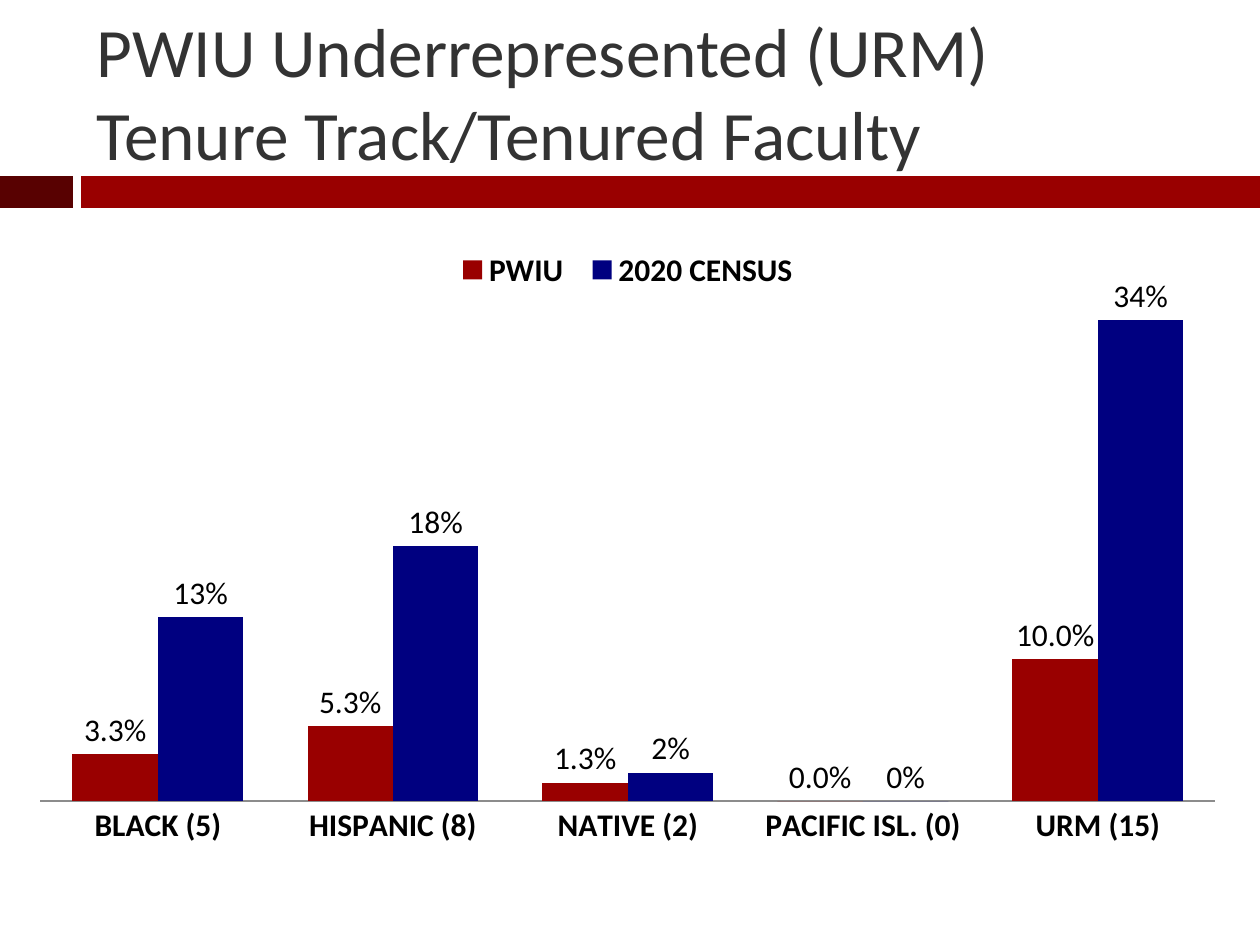
import lxml.etree
import pptx
import pptx.chart.data
import pptx.dml.color
import pptx.enum.chart
import pptx.enum.shapes
import pptx.enum.text
import pptx.oxml
import pptx.oxml.ns
import pptx.util

SCALE = 914400 / 126
FONT = "Calibri"
COLORS = {
    "maroon": "580101",
    "red": "990000",
    "navy": "000080",
    "title": "333333",
    "text": "000000",
    "axis": "8C8C8C",
}
CATEGORIES = ["BLACK (5)", "HISPANIC (8)", "NATIVE (2)", "PACIFIC ISL. (0)", "URM (15)"]
SERIES = [
    ("PWIU", [0.033, 0.053, 0.013, 0, 0.1], "0.0%", "red"),
    ("2020 CENSUS", [0.13, 0.18, 0.02, 0, 0.34], "0%", "navy"),
]


def emu(*lengths):
    """Turn px lengths into EMU."""
    return [pptx.util.Emu(round(length * SCALE)) for length in lengths]


def color(name):
    """Look up a named colour."""
    return pptx.dml.color.RGBColor.from_string(COLORS[name])


def style_font(font, size, name, bold=False):
    """Give a font its face, size, colour and weight."""
    font.name = FONT
    font.size = pptx.util.Pt(size)
    font.bold = bold
    font.color.rgb = color(name)


def add_title(page, box):
    """Place the two-line title."""
    title = page.shapes.title
    title.left, title.top, title.width, title.height = emu(*box)
    frame = title.text_frame
    frame.text = "PWIU Underrepresented (URM)\vTenure Track/Tenured Faculty"
    frame.word_wrap = True
    frame.auto_size = pptx.enum.text.MSO_AUTO_SIZE.NONE
    frame.vertical_anchor = pptx.enum.text.MSO_ANCHOR.MIDDLE
    para = frame.paragraphs[0]
    para.alignment = pptx.enum.text.PP_ALIGN.LEFT
    for span in para.runs:
        style_font(span.font, 39.6, "title")


def add_band(page, box):
    """Draw the band with its short dark block and long red block."""
    left, top, width, height = box
    block, gap = 73, 8
    rest = block + gap
    for offset, length, name in [(0, block, "maroon"), (rest, width - rest, "red")]:
        bar = page.shapes.add_shape(
            pptx.enum.shapes.MSO_SHAPE.RECTANGLE, *emu(left + offset, top, length, height)
        )
        bar.shadow.inherit = False
        bar.fill.solid()
        bar.fill.fore_color.rgb = color(name)
        bar.line.fill.background()


def set_layout(part, before, fractions, inner=False):
    """Fix a chart part at fractions of the chart box."""
    for old in part.findall(pptx.oxml.ns.qn("c:layout")):
        part.remove(old)
    layout = lxml.etree.Element(pptx.oxml.ns.qn("c:layout"))
    manual = lxml.etree.SubElement(layout, pptx.oxml.ns.qn("c:manualLayout"))
    settings = [("layoutTarget", "inner")] if inner else []
    settings += [("xMode", "edge"), ("yMode", "edge")]
    settings += zip("xywh", fractions)
    for tag, value in settings:
        lxml.etree.SubElement(manual, pptx.oxml.ns.qn("c:" + tag), val=str(value))
    part.find(pptx.oxml.ns.qn(before)).addprevious(layout)


def add_faculty_chart(page, box):
    """Place the column chart comparing faculty with the census."""
    data = pptx.chart.data.CategoryChartData()
    data.categories = CATEGORIES
    for name, values, number_format, _ in SERIES:
        data.add_series(name, values, number_format)
    kind = pptx.enum.chart.XL_CHART_TYPE.COLUMN_CLUSTERED
    chart = page.shapes.add_chart(kind, *emu(*box), data).chart
    style_font(chart.font, 18, "text")
    chart.has_title = False

    plot = chart.plots[0]
    plot.gap_width = 75
    plot.overlap = 0
    plot.vary_by_categories = False
    for series, (_, _, number_format, name) in zip(plot.series, SERIES):
        series.format.fill.solid()
        series.format.fill.fore_color.rgb = color(name)
        series.invert_if_negative = False
        labels = series.data_labels
        labels.show_value = True
        labels.number_format = number_format
        labels.number_format_is_linked = False
        labels.position = pptx.enum.chart.XL_LABEL_POSITION.OUTSIDE_END
        style_font(labels.font, 18, "text")

    axis = chart.category_axis
    axis.major_tick_mark = pptx.enum.chart.XL_TICK_MARK.NONE
    axis.format.line.color.rgb = color("axis")
    style_font(axis.tick_labels.font, 18, "text", bold=True)
    scale = chart.value_axis
    scale.minimum_scale, scale.maximum_scale = 0, 0.4
    scale.has_major_gridlines = False
    scale.tick_labels.number_format = "0.0%"
    scale.tick_labels.number_format_is_linked = False
    scale.visible = False

    chart.has_legend = True
    legend = chart.legend
    legend.position = pptx.enum.chart.XL_LEGEND_POSITION.BOTTOM
    legend.include_in_layout = False
    style_font(legend.font, 18, "text", bold=True)
    area = plot._element.getparent()
    set_layout(area, "c:barChart", (0.02, 0.02, 0.96, 0.81), inner=True)
    set_layout(legend._element, "c:overlay", (0.35, 0.04, 0.3, 0.06))


def main():
    """Build and save the slide."""
    deck = pptx.Presentation()
    deck.slide_width, deck.slide_height = emu(1260, 945)
    page = deck.slides.add_slide(deck.slide_layouts[5])
    add_band(page, (0, 176, 1260, 32))
    add_title(page, (84, 23, 1124, 136))
    add_faculty_chart(page, (16, 221, 1224, 699))
    deck.save("out.pptx")


if __name__ == "__main__":
    main()
